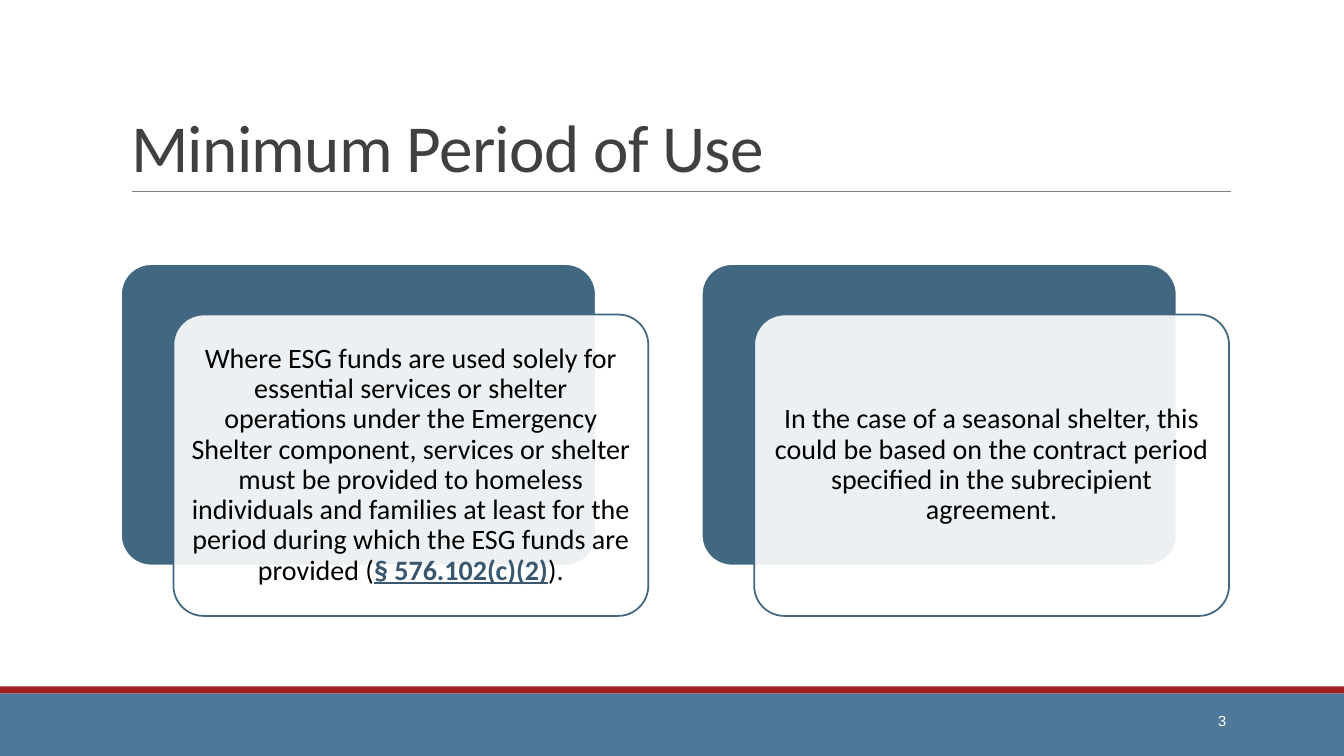
"""Build the slide on the minimum period of use."""
import pptx
import pptx.dml.color
import pptx.enum.shapes
import pptx.enum.text
import pptx.oxml.ns
import pptx.util
import lxml.etree

PX = 9144
HUES = {"white": "FFFFFF", "black": "000000", "title": "404040", "rule": "808080",
        "blue": "4F7898", "red": "9F2122", "panel": "426781", "link": "39576F"}
KIND = pptx.enum.shapes.MSO_SHAPE
ALIGN = pptx.enum.text.PP_ALIGN
ANCHOR = pptx.enum.text.MSO_ANCHOR
qn = pptx.oxml.ns.qn


def draw(kind, box, fill, line=None):
    shape = slide.shapes.add_shape(kind, *[n * PX for n in box])
    shape.shadow.inherit = False
    shape.fill.solid()
    shape.fill.fore_color.rgb = pptx.dml.color.RGBColor.from_string(HUES[fill])
    if line:
        shape.line.color.rgb = pptx.dml.color.RGBColor.from_string(HUES[line])
        shape.line.width = pptx.util.Pt(1.25)
        shape.adjustments[0] = 0.1
    else:
        shape.line.fill.background()
    return shape


def write(para, text, size, hue, face="Calibri", strong=False):
    run = para.add_run()
    run.text = text
    font = run.font
    font.name, font.size = face, pptx.util.Pt(size)
    font.bold = font.underline = strong
    font.color.rgb = pptx.dml.color.RGBColor.from_string(HUES[hue])
    return run


deck = pptx.Presentation()
deck.slide_width, deck.slide_height = 1333 * PX, 750 * PX
slide = deck.slides.add_slide(deck.slide_layouts[5])

rule = slide.shapes.add_connector(
    pptx.enum.shapes.MSO_CONNECTOR.STRAIGHT, 131 * PX, 190 * PX, 1221 * PX, 190 * PX)
rule.line.color.rgb = pptx.dml.color.RGBColor.from_string(HUES["rule"])
rule.line.width = pptx.util.Pt(0.5)
lxml.etree.SubElement(rule._element.spPr, qn("a:effectLst"))

for top in (693, 681):
    draw(KIND.RECTANGLE, (0, top + 7, 1333, 50), "blue")
    draw(KIND.RECTANGLE, (0, top, 1333, 7), "red")

page = slide.shapes.add_textbox(1083 * PX, 695 * PX, 143 * PX, 40 * PX).text_frame
page.word_wrap = True
page.vertical_anchor = ANCHOR.MIDDLE
page.paragraphs[0].alignment = ALIGN.RIGHT
write(page.paragraphs[0], "3", 10.5, "white", "Arial")

title = slide.shapes.title
title.left, title.top, title.width, title.height = 120 * PX, 31 * PX, 1100 * PX, 159 * PX
frame = title.text_frame
frame.word_wrap = True
frame.auto_size = pptx.enum.text.MSO_AUTO_SIZE.NONE
frame.vertical_anchor = ANCHOR.BOTTOM
para = frame.paragraphs[0]
para.alignment = ALIGN.LEFT
para.line_spacing = 0.85
head = write(para, "Minimum Period of Use", 48, "title")
head._r.get_or_add_rPr().set("spc", "-50")

cards = [
    [("Where ESG funds are used solely for essential services or shelter operations "
      "under the Emergency Shelter component, services or shelter must be provided to "
      "homeless individuals and families at least for the period during which the ESG "
      "funds are provided (", "black", False),
     ("§ 576.102(c)(2)", "link", True),
     (").", "black", False)],
    [("In the case of a seasonal shelter, this could be based on the contract period "
      "specified in the subrecipient agreement.", "black", False)],
]
for i, runs in enumerate(cards):
    left = 120 + 576 * i
    draw(KIND.ROUNDED_RECTANGLE, (left, 262, 471, 299), "panel", "white")
    card = draw(KIND.ROUNDED_RECTANGLE, (left + 52, 312, 471, 299), "white", "panel")
    hue = card._element.spPr.find(qn("a:solidFill"))[0]
    lxml.etree.SubElement(hue, qn("a:alpha")).set("val", "90000")
    frame = card.text_frame
    frame.word_wrap = True
    frame.vertical_anchor = ANCHOR.MIDDLE
    frame.margin_left = frame.margin_right = 8 * PX
    frame.margin_top = frame.margin_bottom = 8 * PX
    para = frame.paragraphs[0]
    para.alignment = ALIGN.CENTER
    para.line_spacing = 0.9
    for text, tone, strong in runs:
        write(para, text, 20, tone, strong=strong)

deck.save("out.pptx")
